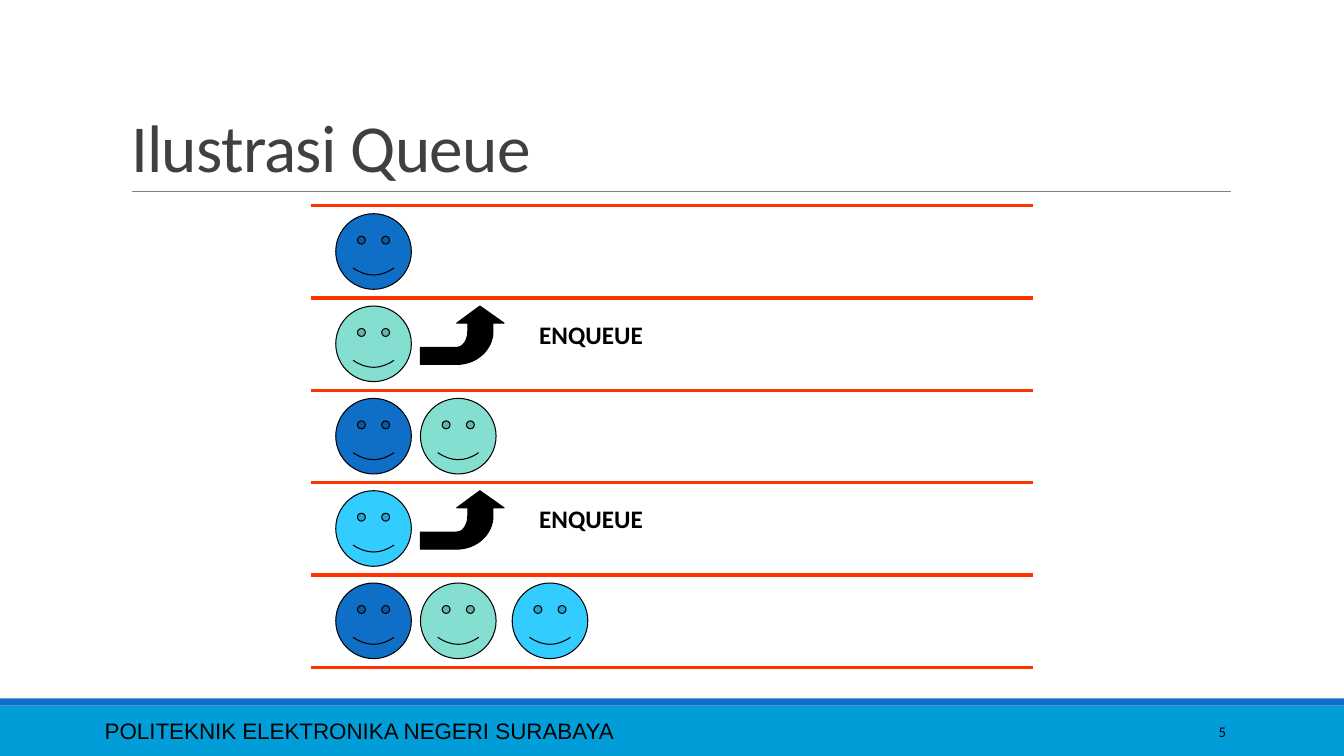
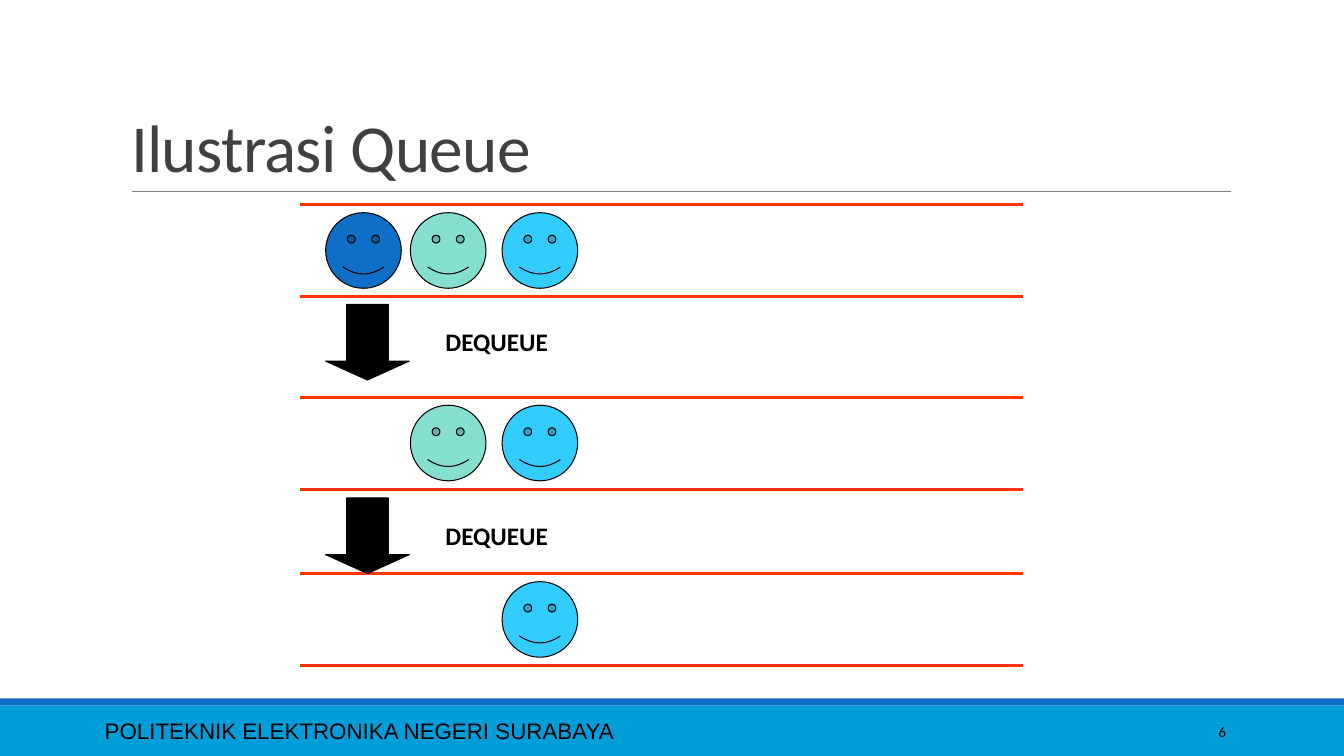
from dataclasses import dataclass
from math import cos, pi, sin
from typing import Optional

from lxml.etree import SubElement
from pptx import Presentation
from pptx.dml.color import RGBColor
from pptx.enum.shapes import MSO_CONNECTOR as Connector, MSO_SHAPE as Preset
from pptx.enum.text import MSO_ANCHOR as Anchor, MSO_AUTO_SIZE as AutoSize, PP_ALIGN as Align
from pptx.oxml.ns import qn
from pptx.shapes.autoshape import Shape
from pptx.shapes.group import GroupShape
from pptx.slide import Slide
from pptx.text.text import TextFrame
from pptx.util import Inches, Pt


@dataclass(frozen=True)
class Theme:
    band: str = "009DD9"
    blue: str = "0F6FC6"
    mint: str = "85DFD0"
    sky: str = "33CCFF"
    rail: str = "FF3300"
    rule: str = "808080"
    title: str = "404040"
    ink: str = "000000"
    font: str = "Calibri"
    footer_font: str = "Arial"
    title_size: float = 48
    label_size: float = 18
    footer_size: float = 16
    number_size: float = 10.5


@dataclass(frozen=True)
class Step:
    """One row: a lane with rails, or an action with an arrow and a label."""
    top: float
    faces: tuple[Optional[str], ...] = ()
    action: str = ""


@dataclass(frozen=True)
class QueueSlide:
    number: int
    left: float
    steps: tuple[Step, ...]


THEME = Theme()
SLIDE_WIDTH = 13.33
RAIL_LENGTH = 7.17
LANE_HEIGHT = 0.916
FACE_SIZE = 0.75
FACE_GAP = 0.08
FACE_OFFSETS = (0.25, 1.09, 2.0)
ENQUEUE_TOPS = [2.04 + LANE_HEIGHT * row for row in range(5)]

QUEUE_SLIDES = (
    QueueSlide(5, 3.08, (
        Step(ENQUEUE_TOPS[0], (THEME.blue,)),
        Step(ENQUEUE_TOPS[1], (THEME.mint,), "ENQUEUE"),
        Step(ENQUEUE_TOPS[2], (THEME.blue, THEME.mint)),
        Step(ENQUEUE_TOPS[3], (THEME.sky,), "ENQUEUE"),
        Step(ENQUEUE_TOPS[4], (THEME.blue, THEME.mint, THEME.sky)),
    )),
    QueueSlide(6, 2.98, (
        Step(2.03, (THEME.blue, THEME.mint, THEME.sky)),
        Step(2.94, action="DEQUEUE"),
        Step(3.94, (None, THEME.mint, THEME.sky)),
        Step(5.69, (None, None, THEME.sky)),
        Step(4.86, action="DEQUEUE"),
    )),
)


def write_text(frame: TextFrame, text: str, *, size: float, font: str = THEME.font,
               color: str = THEME.ink, bold: bool = False, align: Align = Align.LEFT,
               anchor: Anchor = Anchor.TOP, line_spacing: float = 1.0,
               tracking: int = 0) -> None:
    """Fill a frame with one formatted run; tracking is in hundredths of a point."""
    frame.word_wrap = True
    frame.auto_size = AutoSize.NONE
    frame.vertical_anchor = anchor
    paragraph = frame.paragraphs[0]
    paragraph.alignment = align
    paragraph.line_spacing = line_spacing
    run = paragraph.add_run()
    run.text = text
    run.font.name = font
    run.font.size = Pt(size)
    run.font.bold = bold
    run.font.color.rgb = RGBColor.from_string(color)
    if tracking:
        run.font._element.set("spc", str(tracking))


def add_text(parent: Slide | GroupShape, box: tuple[float, ...], text: str, **style) -> None:
    shapes = parent.shapes
    write_text(shapes.add_textbox(*map(Inches, box)).text_frame, text, **style)


def paint(shape: Shape, fill: str, line: Optional[str] = THEME.ink) -> None:
    shape.shadow.inherit = False
    shape.fill.solid()
    shape.fill.fore_color.rgb = RGBColor.from_string(fill)
    if line is None:
        shape.line.fill.background()
    else:
        shape.line.color.rgb = RGBColor.from_string(line)
        shape.line.width = Pt(0.75)


def add_preset(parent: Slide | GroupShape, preset: Preset, box: tuple[float, ...],
               fill: str, line: Optional[str] = THEME.ink) -> Shape:
    shape = parent.shapes.add_shape(preset, *map(Inches, box))
    paint(shape, fill, line)
    return shape


def add_horizontal(parent: Slide | GroupShape, left: float, top: float, length: float,
                   color: str, width: float) -> None:
    connector = parent.shapes.add_connector(
        Connector.STRAIGHT, Inches(left), Inches(top), Inches(left + length), Inches(top))
    connector.line.color.rgb = RGBColor.from_string(color)
    connector.line.width = Pt(width)
    SubElement(connector._element.spPr, qn("a:effectLst"))


def arc(center: tuple[float, float], radii: tuple[float, float],
        start: float, end: float, segments: int = 16) -> list[tuple[float, float]]:
    """Points on an ellipse, with angles in radians running clockwise."""
    angles = [start + (end - start) * index / segments for index in range(segments + 1)]
    return [(center[0] + radii[0] * cos(angle), center[1] + radii[1] * sin(angle))
            for angle in angles]


def add_enqueue_arrow(group: GroupShape, left: float, top: float) -> None:
    """Arrow that runs right, then bends up towards the lane above."""
    bend = (0.36, 0.25)
    outline = [(0.59, 0), (0.83, 0.17), (0.72, 0.17),
               *arc(bend, (0.36, 0.33), 0, pi / 2),
               (0, 0.58), (0, 0.41),
               *arc(bend, (0.11, 0.16), pi / 2, 0),
               (0.47, 0.17), (0.36, 0.17)]
    points = [(Inches(left + x), Inches(top + y)) for x, y in outline]
    builder = group.shapes.build_freeform(*points[0], scale=1.0)
    builder.add_line_segments(points[1:], close=True)
    paint(builder.convert_to_shape(), THEME.ink)


def add_step(slide: Slide, left: float, step: Step) -> None:
    group = slide.shapes.add_group_shape()
    content_top = step.top + FACE_GAP
    for offset, color in zip(FACE_OFFSETS, step.faces):
        if color:
            add_preset(group, Preset.SMILEY_FACE,
                       (left + offset, content_top, FACE_SIZE, FACE_SIZE), color)
    if not step.action:
        for top in (step.top, step.top + LANE_HEIGHT):
            add_horizontal(group, left, top, RAIL_LENGTH, THEME.rail, 2.25)
        return
    if step.action == "ENQUEUE":
        add_enqueue_arrow(group, left + FACE_OFFSETS[1], content_top)
        label_left, label_top = left + 2.17, step.top + 0.16
    else:
        arrow = add_preset(group, Preset.DOWN_ARROW,
                           (left + FACE_OFFSETS[0], content_top, 0.83, 0.75), THEME.ink)
        arrow.adjustments[1] = 0.25
        label_left, label_top = left + 1.34, step.top + 0.25
    add_text(group, (label_left, label_top, 1.67, 0.4), step.action,
             size=THEME.label_size, bold=True)


def add_frame(slide: Slide, number: int) -> None:
    """Title, rule, bands and footer shared by every slide."""
    add_preset(slide, Preset.RECTANGLE, (0, 7, SLIDE_WIDTH, 0.5), THEME.band, None)
    add_preset(slide, Preset.RECTANGLE, (0, 6.93, SLIDE_WIDTH, 0.07), THEME.blue, None)
    add_horizontal(slide, 1.31, 1.9, 10.9, THEME.rule, 0.5)
    add_text(slide, (0.94, 7.05, 8.41, 0.4), "POLITEKNIK ELEKTRONIKA NEGERI SURABAYA",
             size=THEME.footer_size, font=THEME.footer_font, anchor=Anchor.MIDDLE)
    add_text(slide, (10.83, 7.06, 1.43, 0.4), str(number),
             size=THEME.number_size, align=Align.RIGHT, anchor=Anchor.MIDDLE)
    title = slide.shapes.title
    title.left, title.top, title.width, title.height = map(Inches, (1.2, 0.31, 11, 1.59))
    write_text(title.text_frame, "Ilustrasi Queue", size=THEME.title_size,
               color=THEME.title, anchor=Anchor.BOTTOM, line_spacing=0.85, tracking=-50)


def main() -> None:
    presentation = Presentation()
    presentation.slide_width = Inches(SLIDE_WIDTH)
    presentation.slide_height = Inches(7.5)
    title_only = presentation.slide_layouts[5]
    for queue_slide in QUEUE_SLIDES:
        slide = presentation.slides.add_slide(title_only)
        add_frame(slide, queue_slide.number)
        for step in queue_slide.steps:
            add_step(slide, queue_slide.left, step)
    presentation.save("out.pptx")


if __name__ == "__main__":
    main()
